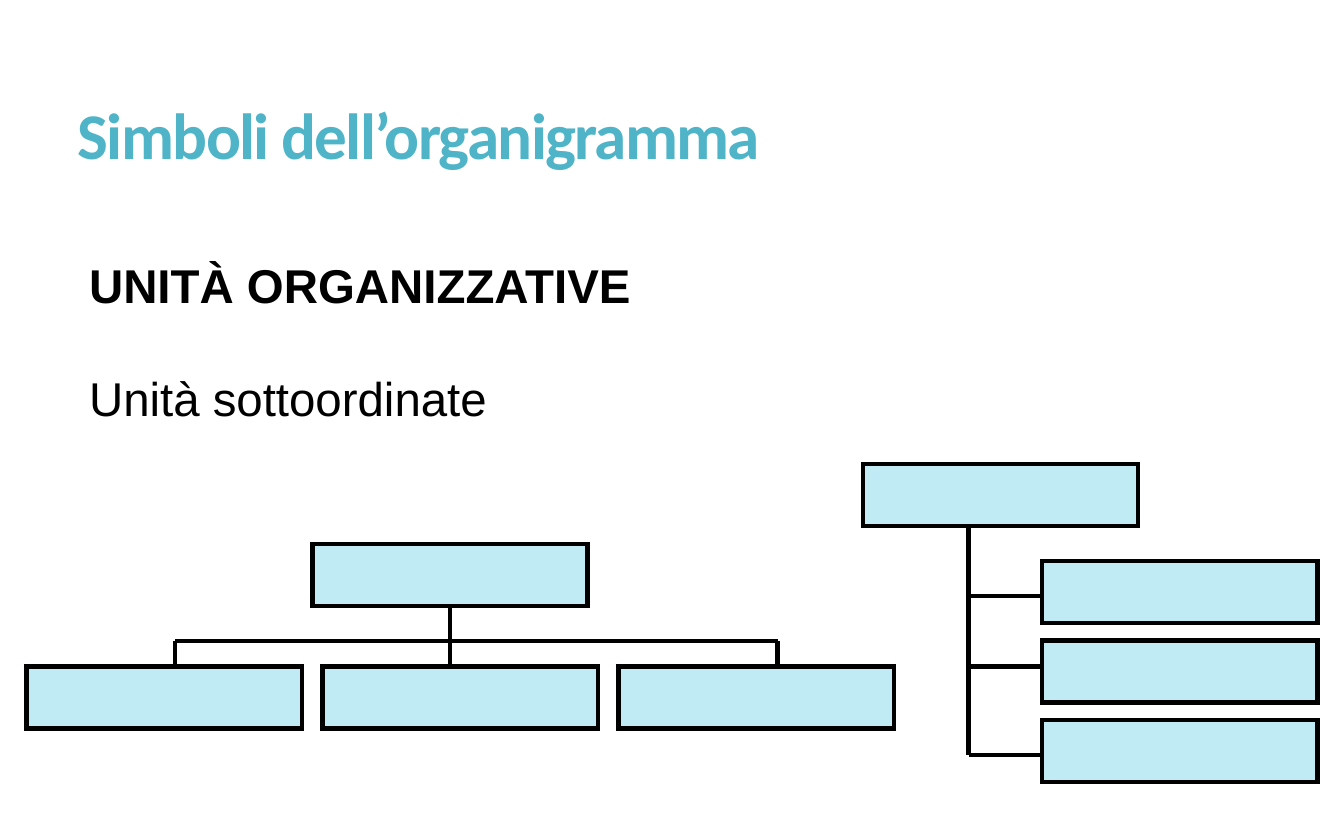
from pptx import Presentation
from pptx import util as u
from pptx.dml.color import RGBColor
from pptx.enum import shapes, text
from pptx.oxml import xmlchemy

PX = 4572
TEAL = RGBColor(0x50, 0xB4, 0xC8)
PALE_BLUE = RGBColor(0xC0, 0xEB, 0xF4)
BLACK = RGBColor(0, 0, 0)
UNIT_W, UNIT_H = 516, 116


def px(*lengths):
    """Turn px lengths into EMU."""
    return [u.Emu(length * PX) for length in lengths]


def apply(target, **values):
    """Set each format value on the target."""
    for key, value in values.items():
        setattr(target, key, value)


def style_font(font, color, **values):
    """Format a font with its colour and other values."""
    apply(font, **values)
    font.color.rgb = color


def style_line(line):
    """Give a line its colour, width and sharp corners."""
    line.color.rgb = BLACK
    line.width = u.Pt(3)
    miter = xmlchemy.OxmlElement("a:miter")
    miter.set("lim", "800000")
    line._get_or_add_ln().append(miter)


def add_unit(slide, left, top):
    """Draw one organisational unit."""
    unit = slide.shapes.add_shape(shapes.MSO_SHAPE.RECTANGLE, *px(left, top, UNIT_W, UNIT_H))
    unit.shadow.inherit = False
    unit.fill.solid()
    unit.fill.fore_color.rgb = PALE_BLUE
    style_line(unit.line)


def add_link(slide, x1, y1, x2, y2):
    """Draw one line between units."""
    link = slide.shapes.add_connector(shapes.MSO_CONNECTOR.STRAIGHT, *px(x1, y1, x2, y2))
    style_line(link.line)
    link._element.spPr.append(xmlchemy.OxmlElement("a:effectLst"))


def add_heading(slide, left, top, width, height):
    """Place and format the slide title."""
    title = slide.shapes.title
    apply(title, **dict(zip(("left", "top", "width", "height"), px(left, top, width, height))))
    apply(title.text_frame, text="Simboli dell’organigramma", auto_size=text.MSO_AUTO_SIZE.NONE,
          vertical_anchor=text.MSO_ANCHOR.MIDDLE)
    heading = title.text_frame.paragraphs[0]
    apply(heading, alignment=text.PP_ALIGN.LEFT, line_spacing=0.85)
    run = heading.runs[0]
    style_font(run.font, TEAL, name="Calibri", size=u.Pt(44), bold=True)
    run._r.get_or_add_rPr().set("spc", "-114")


def add_captions(slide, left, top, width, height):
    """Write the topic and its subtopic."""
    frame = slide.shapes.add_textbox(*px(left, top, width, height)).text_frame
    side, edge = px(24, 12)
    apply(frame, word_wrap=False, margin_left=side, margin_right=side,
          margin_top=edge, margin_bottom=edge)
    topic, subtopic = frame.paragraphs[0], frame.add_paragraph()
    subtopic.space_before = u.Pt(38)
    for caption, words, bold in ((topic, "UNITÀ ORGANIZZATIVE", True),
                                 (subtopic, "Unità sottoordinate", False)):
        run = caption.add_run()
        run.text = words
        style_font(run.font, BLACK, name="Arial", size=u.Pt(32), bold=bold)


def add_wide_tree(slide, left, top):
    """Draw a unit with three subordinates side by side."""
    bar, row = top + 182, top + 230
    first, middle, last = left + 278, left + 794, left + 1408
    add_link(slide, first, bar, last, bar)
    add_link(slide, middle, top + UNIT_H, middle, row)
    for x in (first, last):
        add_link(slide, x, bar, x, row)
    add_unit(slide, left + 536, top)
    for i in range(3):
        add_unit(slide, left + 555 * i, row)


def add_tall_tree(slide, left, top):
    """Draw a unit with three subordinates stacked below it."""
    trunk, column = left + 198, left + 336
    add_link(slide, trunk, top + UNIT_H, trunk, top + 546)
    for drop in (248, 380, 546):
        add_link(slide, trunk, top + drop, column, top + drop)
    add_unit(slide, left, top)
    for i in range(3):
        add_unit(slide, column, top + 182 + 149 * i)


def main():
    """Build and save the slide."""
    deck = Presentation()
    deck.slide_width, deck.slide_height = px(2520, 1575)
    deck.element.sldSz.attrib.pop("type", None)
    slide = deck.slides.add_slide(deck.slide_layouts.get_by_name("Title Only"))
    add_heading(slide, 126, 104, 2268, 316)
    add_captions(slide, 143, 468, 1068, 344)
    add_wide_tree(slide, 50, 1020)
    add_tall_tree(slide, 1618, 870)
    deck.save("out.pptx")


if __name__ == "__main__":
    main()
